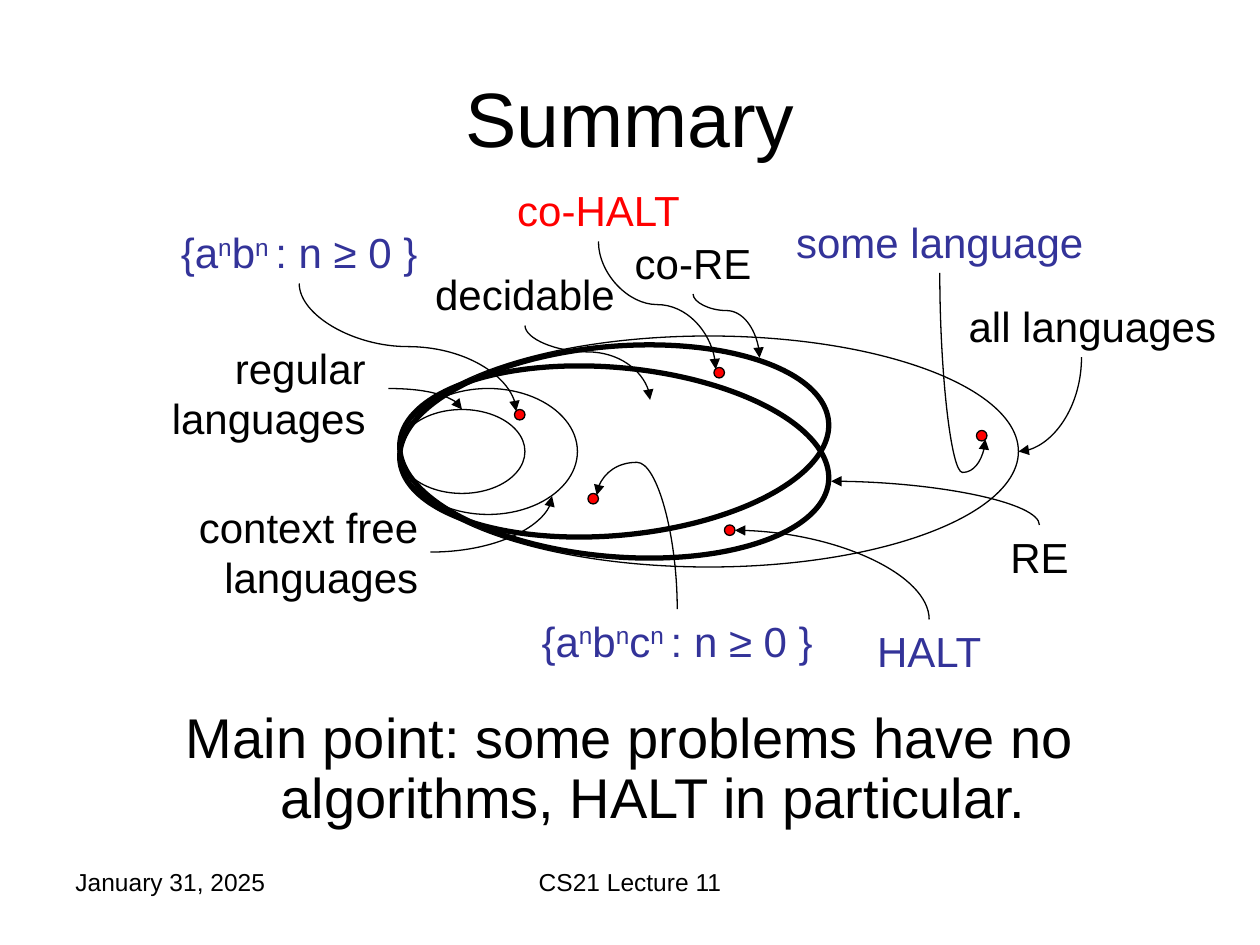
import pptx
import pptx.util
import pptx.dml.color
import pptx.enum.shapes
import pptx.enum.text
import pptx.oxml.ns
from lxml import etree

Pt = pptx.util.Pt
RGB = pptx.dml.color.RGBColor
SHAPE = pptx.enum.shapes.MSO_SHAPE
CURVE = pptx.enum.shapes.MSO_CONNECTOR.CURVE
ALIGN = pptx.enum.text.PP_ALIGN
ANCHOR = pptx.enum.text.MSO_ANCHOR
qn = pptx.oxml.ns.qn

BLACK = RGB(0x00, 0x00, 0x00)
RED = RGB(0xFF, 0x00, 0x00)
BLUE = RGB(0x33, 0x33, 0x99)


class Deck:
    FONT = "Arial"
    THIN, THICK = 0.75, 3
    DOT = 6

    def __init__(self, width, height):
        self.prs = pptx.Presentation()
        self.prs.slide_width, self.prs.slide_height = Pt(width), Pt(height)
        self.s = self.prs.slides.add_slide(self.prs.slide_layouts[6])

    def text(self, x, y, w, h, text, size=24, color=BLACK, align=ALIGN.CENTER,
             anchor=ANCHOR.TOP):
        """Add a text box; parts of the text after ^ up to | are superscript."""
        sp = self.s.shapes.add_textbox(Pt(x), Pt(y), Pt(w), Pt(h))
        tf = sp.text_frame
        tf.word_wrap = True
        tf.vertical_anchor = anchor
        p = tf.paragraphs[0]
        p.alignment = align
        p.font.name, p.font.size = self.FONT, Pt(size)
        p.font.color.rgb = color
        for part in text.split("|"):
            base, _, sup = part.partition("^")
            p.add_run().text = base
            if sup:
                r = p.add_run()
                r.text = sup
                r.font._element.set("baseline", "30000")
        return p

    def ellipse(self, x, y, w, h, line=THIN, fill=None, rotation=0):
        sp = self.s.shapes.add_shape(SHAPE.OVAL, Pt(x), Pt(y), Pt(w), Pt(h))
        sp.shadow.inherit = False
        sp.rotation = rotation
        sp.line.color.rgb, sp.line.width = BLACK, Pt(line)
        if fill is None:
            sp.fill.background()
        else:
            sp.fill.solid()
            sp.fill.fore_color.rgb = fill

    def dot(self, x, y):
        self.ellipse(x, y, self.DOT, self.DOT, fill=RED)

    def curve(self, x1, y1, x2, y2, bend=None, vertical=True):
        """Curved arrow: one bend, or an S whose middle lies at the share bend."""
        dx, dy = x2 - x1, y2 - y1
        w, h = (abs(dy), abs(dx)) if vertical else (abs(dx), abs(dy))
        x, y = (x1 + x2 - w) / 2, (y1 + y2 - h) / 2
        c = self.s.shapes.add_connector(CURVE, Pt(x), Pt(y), Pt(x + w), Pt(y + h))
        c.line.color.rgb, c.line.width = BLACK, Pt(self.THIN)
        spPr = c._element.spPr
        xfrm, geom = spPr.find(qn("a:xfrm")), spPr.find(qn("a:prstGeom"))
        if vertical:
            xfrm.set("rot", str((270 if dx > 0 else 90) * 60000))
            if (dx > 0) == (dy > 0):
                xfrm.set("flipH", "1")
        elif dy < 0:
            xfrm.set("flipV", "1")
        if bend is None:
            geom.set("prst", "curvedConnector2")
        else:
            etree.SubElement(geom.find(qn("a:avLst")), qn("a:gd"),
                             name="adj1", fmla=f"val {round(bend * 100000)}")
        etree.SubElement(spPr.find(qn("a:ln")), qn("a:tailEnd"), type="triangle")
        etree.SubElement(spPr, qn("a:effectLst"))


def main():
    d = Deck(720, 540)

    # Footer, title and main point
    d.text(36, 492, 168, 37.5, "January 31, 2025", 14, align=ALIGN.LEFT)
    d.text(246, 492, 228, 37.5, "CS21 Lecture 11", 14)
    d.text(36, 21.6, 648, 90, "Summary", 44, anchor=ANCHOR.MIDDLE)
    p = d.text(36, 402, 648, 81,
               "Main point: some problems have no algorithms, HALT in particular.", 32)
    p.line_spacing = 0.9
    pPr = p._p.get_or_add_pPr()
    pPr.set("marL", str(Pt(27)))
    pPr.set("indent", str(-Pt(27)))

    # Language classes: all, context free, regular, RE, co-RE
    left = 228
    d.ellipse(left, 192, 354, 132)
    d.ellipse(left, 222, 102, 72)
    d.ellipse(left, 234, 72, 48)
    d.ellipse(left, 210, 246, 108, Deck.THICK, rotation=5.2)
    d.ellipse(left, 198, 246, 108, Deck.THICK, rotation=354.8)

    # Class names
    d.text(84, 192, 132, 65, "regular languages", align=ALIGN.RIGHT)
    d.text(78, 283, 168, 65, "context free languages", align=ALIGN.RIGHT)
    d.text(534, 168, 168, 36, "all languages", align=ALIGN.RIGHT)
    d.text(216, 150, 168, 36, "decidable")
    d.text(510, 300, 168, 36, "RE")
    d.text(312, 132, 168, 36, "co-RE")

    # Example languages
    d.text(66, 126, 210, 36, "{a^n|b^n |: n ≥ 0 }", color=BLUE)
    d.text(282, 348, 210, 36, "{a^n|b^n|c^n |: n ≥ 0 }", color=BLUE)
    d.text(432, 120, 210, 36, "some language", color=BLUE)
    d.text(486, 354, 90, 36, "HALT", color=BLUE)
    d.text(270, 102, 144, 36, "co-HALT", color=RED)
    for x, y in [(294, 234), (336, 282), (558, 246), (414, 300), (408, 210)]:
        d.dot(x, y)

    # Arrows from class names
    d.curve(222, 222, 264, 234, vertical=False)
    d.curve(246, 315.5, 315.5, 283.5, vertical=False)
    d.curve(618, 204, 582, 258)
    d.curve(300, 186, 371.5, 228.5, 0.355)
    d.curve(594, 300, 475, 275)
    d.curve(396, 168, 434, 204.5, 0.26)

    # Arrows from example languages
    d.curve(171, 162, 295, 235, 0.494)
    d.curve(387, 348, 341, 283, 1.29)
    d.curve(537, 156, 563, 251, 1.2)
    d.curve(531, 354, 420, 303)
    d.curve(342, 138, 409, 211, 0.494)

    d.prs.save("out.pptx")


if __name__ == "__main__":
    main()
